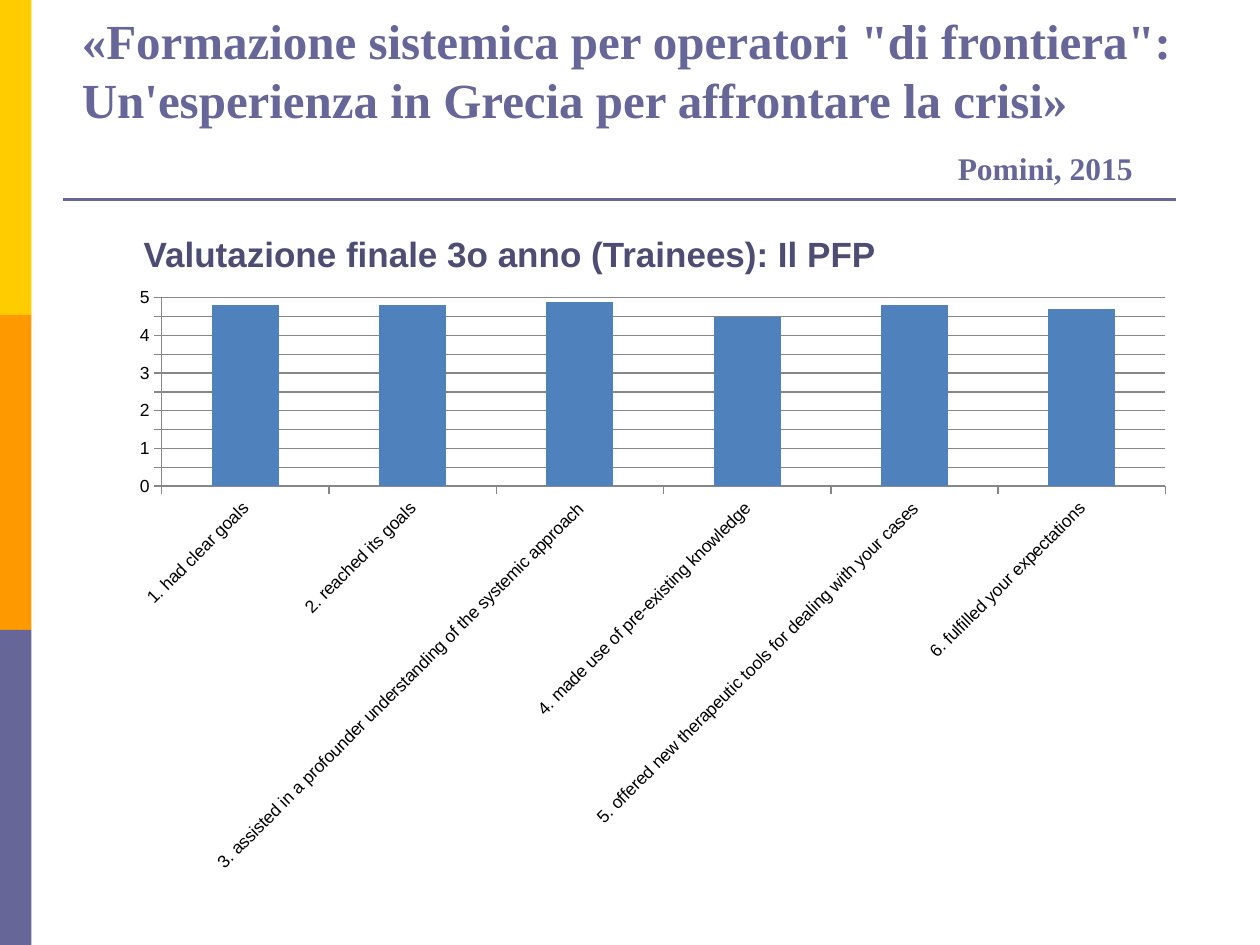
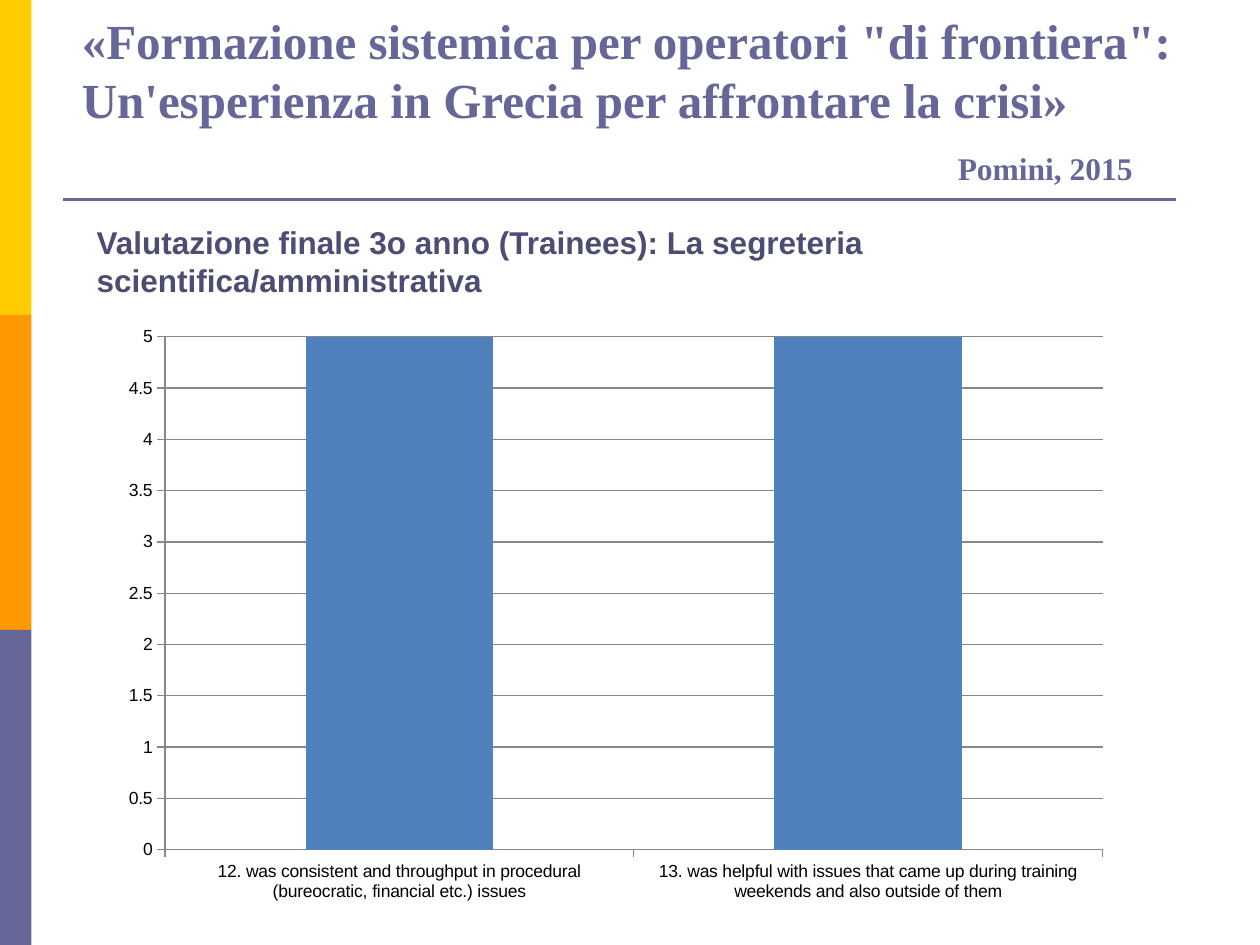
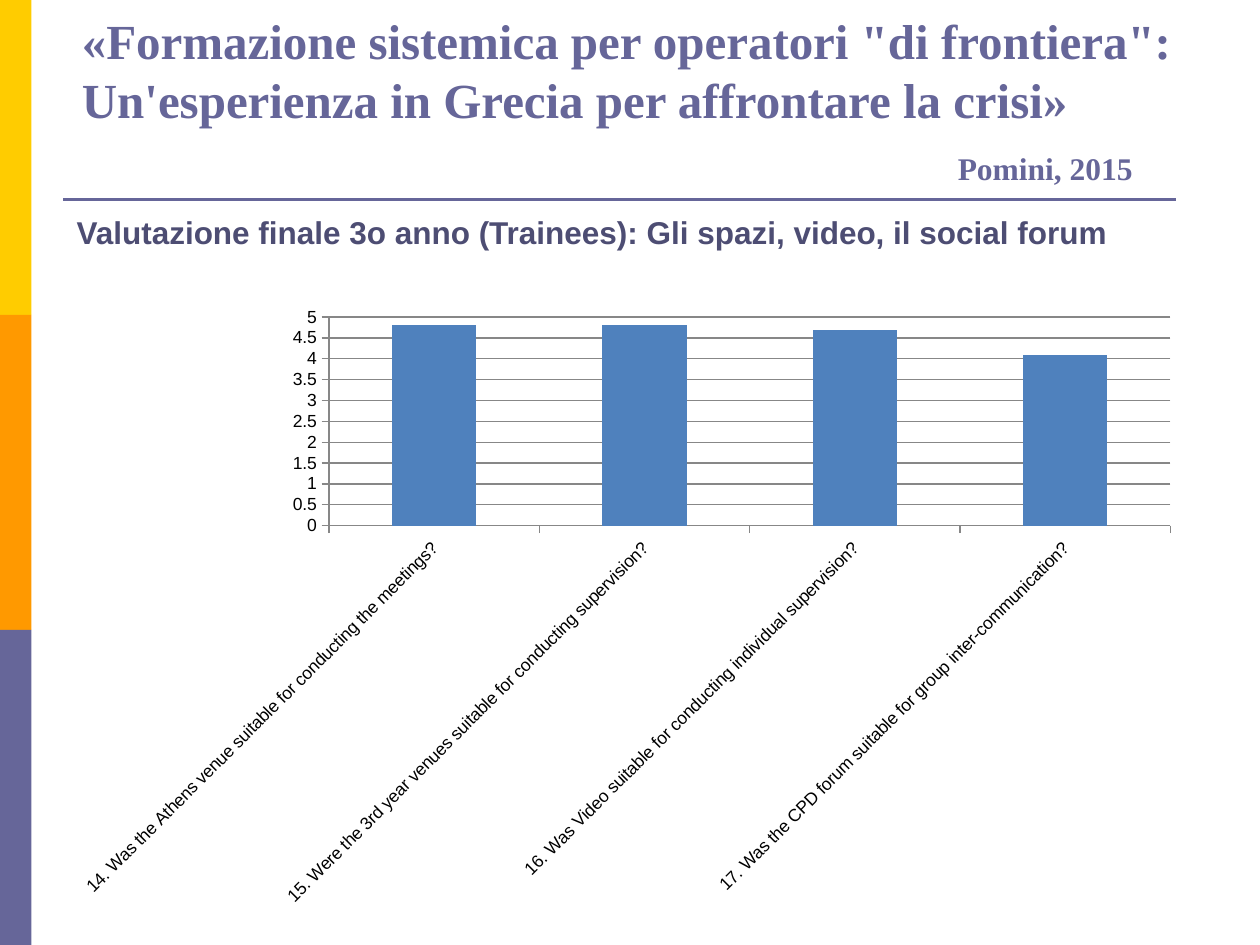
from dataclasses import dataclass
from typing import Any, NamedTuple

from lxml.etree import SubElement
from pptx import Presentation
from pptx.chart.data import CategoryChartData as ChartData
from pptx.dml.color import RGBColor
from pptx.enum.chart import XL_CHART_TYPE as ChartType, XL_TICK_MARK as TickMark
from pptx.enum.shapes import MSO_CONNECTOR as Connector, MSO_SHAPE as Preset
from pptx.enum.text import MSO_ANCHOR as Anchor, MSO_AUTO_SIZE as AutoSize, PP_ALIGN as Align
from pptx.oxml.ns import qn
from pptx.util import Pt


@dataclass(frozen=True)
class Theme:
    yellow: str = "FFCC00"
    orange: str = "FF9900"
    violet: str = "666699"
    heading: str = "4D4D73"
    bar: str = "4F81BD"
    grid: str = "878787"
    black: str = "000000"
    white: str = "FFFFFF"
    title_font: str = "Times New Roman"
    body_font: str = "Arial"
    title_size: float = 28
    author_size: float = 18
    chart_size: float = 10


class Box(NamedTuple):
    left: float
    top: float
    width: float
    height: float

    def lengths(self) -> list[Pt]:
        return [Pt(value) for value in self]


@dataclass(frozen=True)
class Survey:
    heading: str
    heading_size: float
    heading_box: Box
    chart_box: Box
    scores: dict[str, float]
    label_angle: int = 0


THEME = Theme()
SLIDE_WIDTH, SLIDE_HEIGHT = 720, 540
BAND_WIDTH = 18
BAND_COLORS = (THEME.yellow, THEME.orange, THEME.violet)
RULE_LEFT, RULE_RIGHT, RULE_TOP = 36, 672, 114
TITLE_BOX = Box(39.6, 0, 648, 112.3)
TITLE = "«Formazione sistemica per operatori \"di frontiera\": Un'esperienza in Grecia per affrontare la crisi»"
AUTHOR = "Pomini, 2015"
AUTHOR_INDENT = 500.5

SURVEYS = (
    Survey(
        "Valutazione finale 3o anno (Trainees): Il PFP", 20,
        Box(75, 129.6, 437.8, 31), Box(67.7, 163.5, 610.5, 336.2),
        {
            "1. had clear goals": 4.8,
            "2. reached its goals": 4.8,
            "3. assisted in a profounder understanding of the systemic approach": 4.9,
            "4. made use of pre-existing knowledge": 4.5,
            "5. offered new therapeutic tools for dealing with your cases": 4.8,
            "6. fulfilled your expectations": 4.7,
        },
        label_angle=-45,
    ),
    Survey(
        "Valutazione finale 3o anno (Trainees): La segreteria scientifica/amministrativa", 18,
        Box(48.2, 123.8, 676.8, 28.8), Box(62, 180, 579.6, 342),
        {
            "12. was consistent and throughput in procedural (bureocratic, financial etc.) issues": 5,
            "13. was helpful with issues that came up during training weekends and also outside of them": 5,
        },
    ),
    Survey(
        "Valutazione finale 3o anno (Trainees): Gli spazi, video, il social forum", 18,
        Box(36.7, 118, 607.7, 28.8), Box(33.8, 168.5, 648, 356.4),
        {
            "14. Was the Athens venue suitable for conducting the meetings?": 4.8,
            "15. Were the 3rd year venues suitable for conducting supervision?": 4.8,
            "16. Was Video suitable for conducting individual supervision?": 4.7,
            "17. Was the CPD forum suitable for group inter-communication?": 4.1,
        },
        label_angle=-45,
    ),
)


def set_values(target: Any, values: dict[str, Any]) -> None:
    for name, value in values.items():
        setattr(target, name, value)


def format_font(font: Any, name: str, size: float, color: str, bold: bool) -> None:
    set_values(font, {"name": name, "size": Pt(size), "bold": bold})
    font.color.rgb = RGBColor.from_string(color)


def format_line(line: Any, color: str, width: float) -> None:
    line.color.rgb = RGBColor.from_string(color)
    line.width = Pt(width)


def paint(fill: Any, color: str) -> None:
    fill.solid()
    fill.fore_color.rgb = RGBColor.from_string(color)


def add_frame(slide: Any) -> None:
    """Draw the side bands and the rule under the title."""
    band_height = SLIDE_HEIGHT / len(BAND_COLORS)
    for index, color in enumerate(BAND_COLORS):
        box = Box(0, index * band_height, BAND_WIDTH, band_height)
        band = slide.shapes.add_shape(Preset.RECTANGLE, *box.lengths())
        band.shadow.inherit = False
        paint(band.fill, color)
        band.line.fill.background()
    ends = (RULE_LEFT, RULE_TOP, RULE_RIGHT, RULE_TOP)
    rule = slide.shapes.add_connector(Connector.STRAIGHT, *map(Pt, ends))
    format_line(rule.line, THEME.violet, 1.5)
    SubElement(rule.element.spPr, qn("a:effectLst"))


def fill_title(title: Any) -> None:
    set_values(title, dict(zip(("left", "top", "width", "height"), TITLE_BOX.lengths())))
    frame = title.text_frame
    set_values(frame, {
        "word_wrap": True, "auto_size": AutoSize.NONE, "vertical_anchor": Anchor.BOTTOM,
        "margin_left": Pt(7.2), "margin_right": Pt(7.2), "margin_bottom": Pt(5.6),
    })
    frame.text = f"{TITLE}\n{AUTHOR}"
    sizes = (THEME.title_size, THEME.author_size)
    for paragraph, size in zip(frame.paragraphs, sizes):
        set_values(paragraph, {
            "alignment": Align.LEFT, "line_spacing": Pt(33.5), "space_before": Pt(0),
        })
        format_font(paragraph.runs[0].font, THEME.title_font, size, THEME.violet, True)
    frame.paragraphs[1].runs[0].font.size = Pt(THEME.author_size)
    author_properties = frame.paragraphs[1]._p.get_or_add_pPr()
    author_properties.set("marL", str(Pt(AUTHOR_INDENT)))


def add_heading(slide: Any, survey: Survey) -> None:
    frame = slide.shapes.add_textbox(*survey.heading_box.lengths()).text_frame
    frame.word_wrap = False
    frame.text = survey.heading
    font = frame.paragraphs[0].runs[0].font
    format_font(font, THEME.body_font, survey.heading_size, THEME.heading, True)


def add_scores(slide: Any, survey: Survey) -> None:
    data = ChartData(number_format="General")
    data.categories = list(survey.scores)
    data.add_series("Series 1", list(survey.scores.values()))
    chart = slide.shapes.add_chart(
        ChartType.COLUMN_CLUSTERED, *survey.chart_box.lengths(), data).chart
    set_values(chart, {"has_legend": False, "has_title": False})
    format_font(chart.font, THEME.body_font, THEME.chart_size, THEME.black, False)

    plot = chart.plots[0]
    set_values(plot, {"gap_width": 150, "vary_by_categories": False})
    paint(plot.series[0].format.fill, THEME.bar)

    value_axis, category_axis = chart.value_axis, chart.category_axis
    set_values(value_axis, {
        "minimum_scale": 0, "maximum_scale": 5, "major_unit": 0.5,
        "has_major_gridlines": True,
    })
    for axis in (value_axis, category_axis):
        axis.major_tick_mark = TickMark.OUTSIDE
        format_line(axis.format.line, THEME.grid, 0.75)
    format_line(value_axis.major_gridlines.format.line, THEME.grid, 0.75)
    if survey.label_angle:
        labels = category_axis.tick_labels
        labels.font.size = Pt(THEME.chart_size)
        body = category_axis._element.find(qn("c:txPr")).find(qn("a:bodyPr"))
        body.set("rot", str(survey.label_angle * 60000))


def add_survey_slide(presentation: Any, survey: Survey) -> None:
    title_only = presentation.slide_layouts.get_by_name("Title Only")
    slide = presentation.slides.add_slide(title_only)
    paint(slide.background.fill, THEME.white)
    add_frame(slide)
    fill_title(slide.shapes.title)
    add_scores(slide, survey)
    add_heading(slide, survey)


def main() -> None:
    presentation = Presentation()
    set_values(presentation, {"slide_width": Pt(SLIDE_WIDTH), "slide_height": Pt(SLIDE_HEIGHT)})
    for survey in SURVEYS:
        add_survey_slide(presentation, survey)
    presentation.save("out.pptx")


if __name__ == "__main__":
    main()
